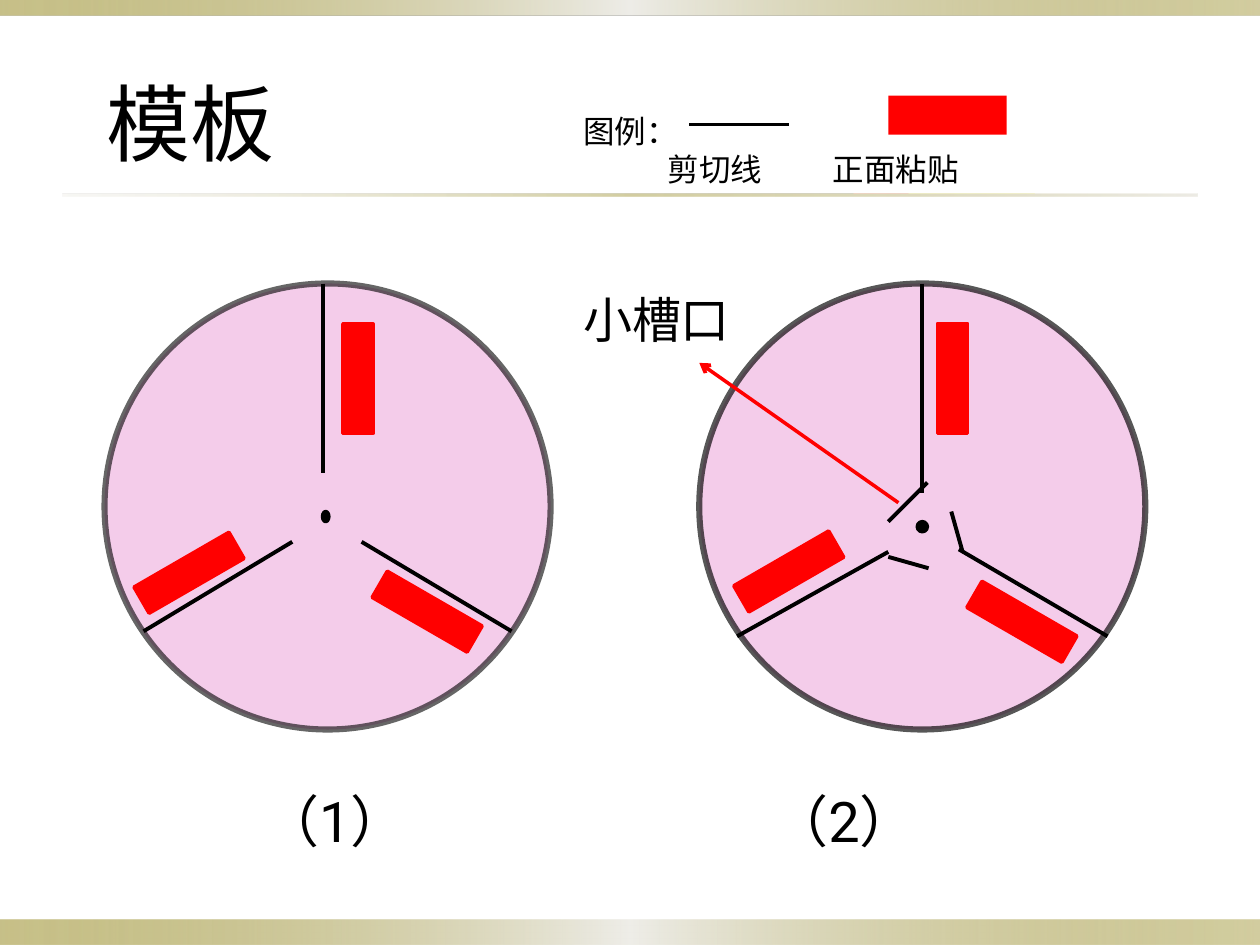
from lxml.etree import SubElement
from pptx import Presentation
from pptx.dml.color import RGBColor
from pptx.enum.shapes import MSO_CONNECTOR as Connector, MSO_SHAPE as Shape
from pptx.oxml.ns import qn
from pptx.util import Inches, Pt

BLACK, RED, PINK, OLIVE = "000000", "FF0000", "CC0099", "918415"


def color(value):
    return RGBColor.from_string(value)


def set_alpha(parent, percent):
    for tone in parent.iter(qn("a:srgbClr")):
        SubElement(tone, qn("a:alpha"), val=str(percent * 1000))


class TemplateSlide:
    font = "Roboto"
    cut_width = 2.25

    def __init__(self, slide):
        self.slide = slide
        self.shapes = slide.shapes

    def shape(self, kind, box, fill=None, line=None, width=2, rotation=0):
        item = self.shapes.add_shape(kind, *map(Inches, box))
        item.shadow.inherit = False
        item.rotation = rotation
        if fill:
            item.fill.solid()
            item.fill.fore_color.rgb = color(fill)
        if line:
            item.line.color.rgb = color(line)
            item.line.width = Pt(width)
        else:
            item.line.fill.background()
        return item

    def band(self, box, stops):
        bar = self.shape(Shape.RECTANGLE, box)
        bar.fill.gradient()
        bar.fill.gradient_angle = 0
        stop_list = bar._element.spPr.find(qn("a:gradFill")).find(qn("a:gsLst"))
        for default in list(stop_list):
            stop_list.remove(default)
        for position, (tone, opacity) in zip((0, 50, 100), stops):
            stop = SubElement(stop_list, qn("a:gs"), pos=str(position * 1000))
            SubElement(stop, qn("a:srgbClr"), val=tone)
            set_alpha(stop, opacity)

    def text(self, box, lines, size, font=None, tabs=()):
        frame = self.shapes.add_textbox(*map(Inches, box)).text_frame
        frame.word_wrap = True
        for number, line in enumerate(lines):
            paragraph = frame.paragraphs[0] if number == 0 else frame.add_paragraph()
            run = paragraph.add_run()
            run.text = line
            run.font.size = Pt(size)
            run.font.name = font or self.font
            run.font.color.rgb = color(BLACK)
            if tabs:
                tab_list = SubElement(paragraph._p.get_or_add_pPr(), qn("a:tabLst"))
                for tab in tabs:
                    SubElement(tab_list, qn("a:tab"), pos=str(Inches(tab)), algn="l")

    def line(self, start, end, tone=BLACK, width=cut_width, arrow=False):
        cut = self.shapes.add_connector(Connector.STRAIGHT, *map(Inches, start + end))
        cut.line.color.rgb = color(tone)
        cut.line.width = Pt(width)
        if arrow:
            SubElement(cut.line._get_or_add_ln(), qn("a:tailEnd"), type="arrow")
        SubElement(cut._element.spPr, qn("a:effectLst"))

    def disc(self, left, rim_opacity):
        disc = self.shape(Shape.OVAL, (left, 2.25, 3.54, 3.54), PINK, BLACK, 3.5)
        set_alpha(disc._element.spPr.find(qn("a:solidFill")), 20)
        set_alpha(disc.line._get_or_add_ln(), rim_opacity)

    def template(self, left, rim_opacity, hub, cuts, pads):
        self.disc(left, rim_opacity)
        self.shape(Shape.OVAL, hub, BLACK, BLACK)
        for start, end in cuts:
            self.line(start, end)
        for turn, corner in enumerate(pads):
            self.shape(Shape.RECTANGLE, corner + (0.24, 0.87), RED, RED, rotation=120 * turn)


def main():
    deck = Presentation()
    deck.slide_width, deck.slide_height = Inches(10), Inches(7.5)
    page = TemplateSlide(deck.slides.add_slide(deck.slide_layouts[6]))

    edge = [(OLIVE, 50), ("EEEDE8", 100), (OLIVE, 40)]
    page.band((0, 7.3, 10, 0.2), edge)
    page.band((0, 0, 10, 0.12), edge)
    page.band((0.5, 1.54, 9, 0.02), [("DCD9CC", 20), (OLIVE, 40), ("DCD9CC", 50)])

    page.text((0.75, 0.52, 2.99, 0.91), ["模板"], 48, "Arial")
    page.text((1.69, 6.19, 6.85, 0.64), ["\t（1）\t（2）"], 32, tabs=(0.3, 4.34))

    page.text((4.53, 0.84, 3.78, 1.01), ["图例：", "\t剪切线\t正面粘贴"], 18, tabs=(0.67, 1.98))
    page.line((5.47, 0.99), (6.26, 0.99), width=2)
    page.shape(Shape.RECTANGLE, (7.05, 0.76, 0.94, 0.31), RED)

    page.template(
        0.83, 60, (2.56, 4.06, 0.05, 0.08),
        cuts=[((2.56, 2.25), (2.56, 3.75)),
              ((4.06, 5.01), (2.87, 4.3)),
              ((1.14, 5.01), (2.32, 4.3))],
        pads=[(2.72, 2.57), (3.27, 4.42), (1.38, 4.11)])

    notches = [((7.36, 3.83), (7.05, 4.14)),
               ((7.64, 4.38), (7.55, 4.06)),
               ((7.05, 4.42), (7.37, 4.51))]
    page.template(
        5.55, 65, (7.28, 4.14, 0.08, 0.08),
        cuts=[((7.32, 2.25), (7.32, 3.91)),
              ((8.79, 5.05), (7.61, 4.36)),
              ((5.85, 5.05), (7.05, 4.38))] + notches,
        pads=[(7.44, 2.57), (7.99, 4.5), (6.14, 4.1)])

    page.text((4.53, 2.25, 1.42, 0.57), ["小槽口"], 28)
    page.line((7.13, 3.99), (5.55, 2.88), RED, 2, arrow=True)

    deck.save("out.pptx")


if __name__ == "__main__":
    main()
